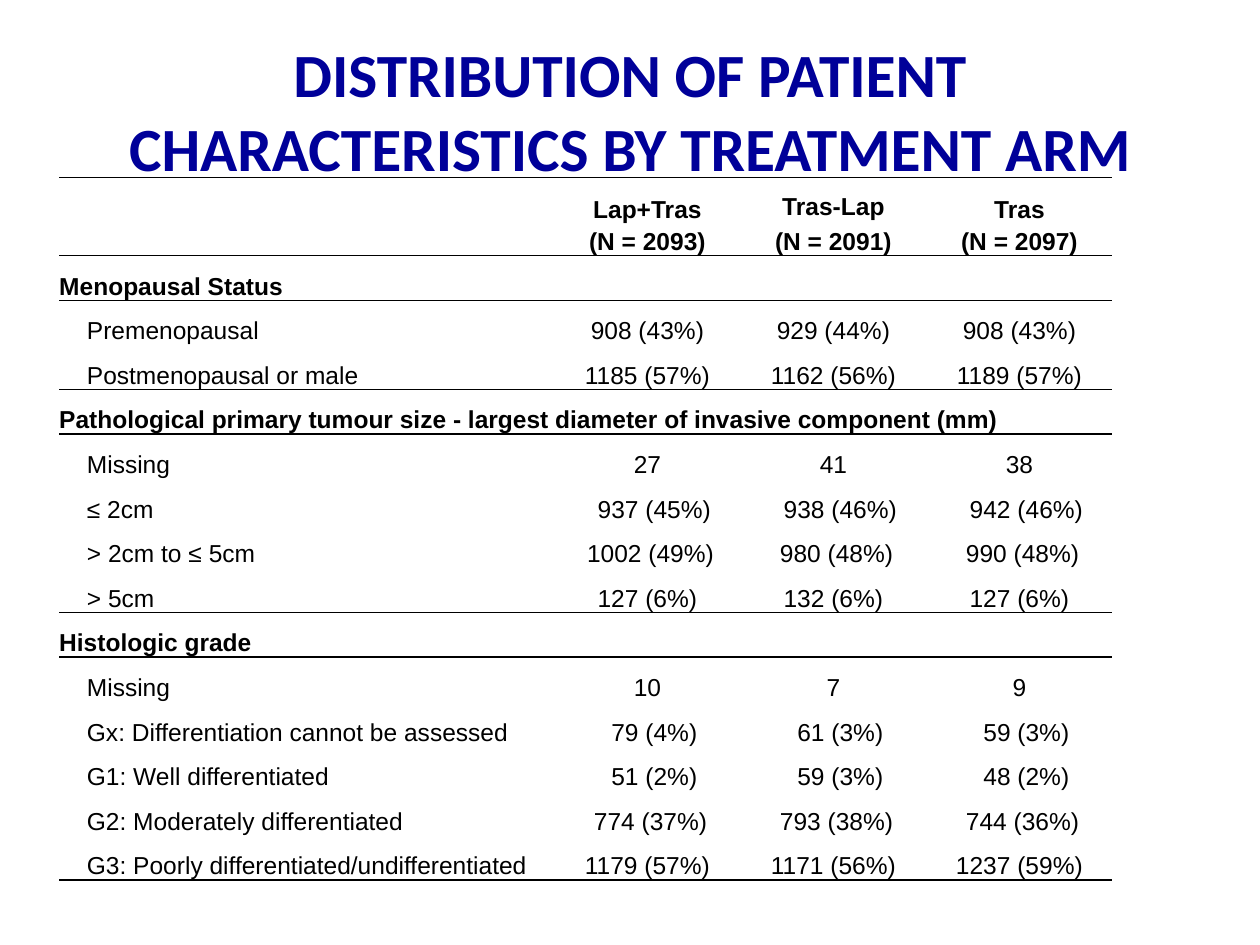
from dataclasses import dataclass

from lxml.etree import SubElement
from pptx import Presentation
from pptx.dml.color import RGBColor
from pptx.enum.text import MSO_ANCHOR, PP_ALIGN
from pptx.oxml.ns import qn
from pptx.table import Table, _Cell
from pptx.text.text import _Paragraph
from pptx.util import Inches, Pt

COLORS = {"title": "000099", "text": "000000", "rule": "000000"}
NO_GRID_STYLE = "{2D5ABB26-0587-4C30-8999-92F81FD0307C}"
TABLE_WIDTH, TABLE_HEIGHT = 8.36, 5.58
LABEL_WIDTH, HEADER_HEIGHT = 3.93, 0.62
LABEL_INDENT = 0.22


@dataclass
class Row:
    """A patient group with one value per arm and the left inset of its values."""

    label: str
    values: tuple[str, str, str]
    inset: float = 0


@dataclass
class Section:
    """A characteristic and the rows below its heading."""

    heading: str
    rows: list[Row]
    spans_table: bool = False


ARMS = [("Lap+Tras", "(N = 2093)"), ("Tras-Lap", "(N = 2091)"), ("Tras", "(N = 2097)")]
SPLIT_ARM = "Tras-Lap"
SECTIONS = [
    Section("Menopausal Status", [
        Row("Premenopausal", ("908 (43%)", "929 (44%)", "908 (43%)")),
        Row("Postmenopausal or male", ("1185 (57%)", "1162 (56%)", "1189 (57%)")),
    ]),
    Section("Pathological primary tumour size - largest diameter of invasive component (mm)", [
        Row("Missing", ("27", "41", "38")),
        Row("≤ 2cm", ("937 (45%)", "938 (46%)", "942 (46%)"), 0.11),
        Row("> 2cm to ≤ 5cm", ("1002 (49%)", "980 (48%)", "990 (48%)"), 0.05),
        Row("> 5cm", ("127 (6%)", "132 (6%)", "127 (6%)")),
    ], spans_table=True),
    Section("Histologic grade", [
        Row("Missing", ("10", "7", "9")),
        Row("Gx: Differentiation cannot be assessed", ("79 (4%)", "61 (3%)", "59 (3%)"), 0.11),
        Row("G1: Well differentiated", ("51 (2%)", "59 (3%)", "48 (2%)"), 0.11),
        Row("G2: Moderately differentiated", ("774 (37%)", "793 (38%)", "744 (36%)"), 0.05),
        Row("G3: Poorly differentiated/undifferentiated", ("1179 (57%)", "1171 (56%)", "1237 (59%)")),
    ]),
]


def add_run(paragraph: _Paragraph, text: str, font: str, size: float, color: str, bold: bool) -> None:
    """Append one formatted run."""
    run = paragraph.add_run()
    run.text = text
    run.font.name = font
    run.font.size = Pt(size)
    run.font.bold = bold
    run.font.color.rgb = RGBColor.from_string(COLORS[color])


def write_cell(cell: _Cell, text: str, bold: bool = False, centered: bool = False, inset: float = 0) -> None:
    """Write a single line into a table cell."""
    cell.margin_left = Inches(inset)
    paragraph = cell.text_frame.paragraphs[0]
    paragraph.alignment = PP_ALIGN.CENTER if centered else PP_ALIGN.LEFT
    add_run(paragraph, text, "Arial", 14, "text", bold)


def write_arm(cell: _Cell, name: str, count: str) -> None:
    """Write a treatment arm and its patient count."""
    cell.margin_right = Inches(0.01)
    write_cell(cell, name, True, True, 0.01)
    paragraph = cell.text_frame.paragraphs[0]
    paragraph.space_after = Pt(1)
    if name == SPLIT_ARM:
        paragraph = cell.text_frame.add_paragraph()
        paragraph.alignment = PP_ALIGN.CENTER
        paragraph.line_spacing = 1.15
        paragraph.space_before = paragraph.space_after = Pt(1)
    else:
        paragraph.add_line_break()
    add_run(paragraph, count, "Arial", 14, "text", True)


def prepare_cell(cell: _Cell) -> None:
    """Clear the insets and fill of a cell and set its base text format."""
    cell.margin_left = cell.margin_right = cell.margin_top = cell.margin_bottom = 0
    cell.vertical_anchor = MSO_ANCHOR.BOTTOM
    cell.fill.background()
    paragraph = cell.text_frame.paragraphs[0]
    paragraph.line_spacing = 1.15
    paragraph.font.size = Pt(14)


def draw_rule(table: Table, row: int, side: str) -> None:
    """Draw a horizontal rule along one side of a row."""
    for cell in table.rows[row].cells:
        properties = cell._tc.get_or_add_tcPr()
        line = SubElement(properties, qn(f"a:{side}"), w=str(Pt(1)))
        fill = SubElement(line, qn("a:solidFill"))
        SubElement(fill, qn("a:srgbClr"), val=COLORS["rule"])
        cell.fill.background()
        properties.append(properties.find(qn("a:noFill")))


def add_title(slide) -> None:
    """Add the slide title."""
    shape = slide.shapes.add_textbox(Inches(0.5), Inches(0.21), Inches(9), Inches(1.25))
    frame = shape.text_frame
    frame.word_wrap = True
    frame.margin_top, frame.margin_bottom = Inches(0.08), 0
    paragraph = frame.paragraphs[0]
    paragraph.alignment = PP_ALIGN.CENTER
    title = "DISTRIBUTION OF PATIENT CHARACTERISTICS BY TREATMENT ARM"
    add_run(paragraph, title, "Calibri", 35.1, "title", True)


def add_characteristics(slide) -> None:
    """Add the table of characteristics by treatment arm."""
    row_count = 1 + sum(1 + len(section.rows) for section in SECTIONS)
    frame = slide.shapes.add_table(row_count, 1 + len(ARMS), Inches(0.47), Inches(1.41),
                                   Inches(TABLE_WIDTH), Inches(TABLE_HEIGHT))
    table = frame.table
    table.first_row = table.horz_banding = False
    table._tbl.tblPr.find(qn("a:tableStyleId")).text = NO_GRID_STYLE
    for index, column in enumerate(table.columns):
        column.width = Inches((TABLE_WIDTH - LABEL_WIDTH) / len(ARMS) if index else LABEL_WIDTH)
    for index, row in enumerate(table.rows):
        row.height = Inches((TABLE_HEIGHT - HEADER_HEIGHT) / (row_count - 1) if index else HEADER_HEIGHT)
    for cell in table.iter_cells():
        prepare_cell(cell)

    for column, (name, count) in enumerate(ARMS, 1):
        write_arm(table.cell(0, column), name, count)
    draw_rule(table, 0, "lnT")
    draw_rule(table, 0, "lnB")
    position = 1
    for section in SECTIONS:
        if section.spans_table:
            table.cell(position, 0).merge(table.cell(position, len(ARMS)))
        write_cell(table.cell(position, 0), section.heading, bold=True)
        draw_rule(table, position, "lnT")
        for position, row in enumerate(section.rows, position + 1):
            write_cell(table.cell(position, 0), row.label, inset=LABEL_INDENT)
            for column, value in enumerate(row.values, 1):
                write_cell(table.cell(position, column), value, centered=True, inset=row.inset)
        draw_rule(table, position, "lnB")
        position += 1


def main() -> None:
    """Build and save the slide."""
    presentation = Presentation()
    presentation.slide_width, presentation.slide_height = Inches(10), Inches(7.5)
    slide = presentation.slides.add_slide(presentation.slide_layouts[6])
    add_title(slide)
    add_characteristics(slide)
    presentation.save("out.pptx")


if __name__ == "__main__":
    main()
